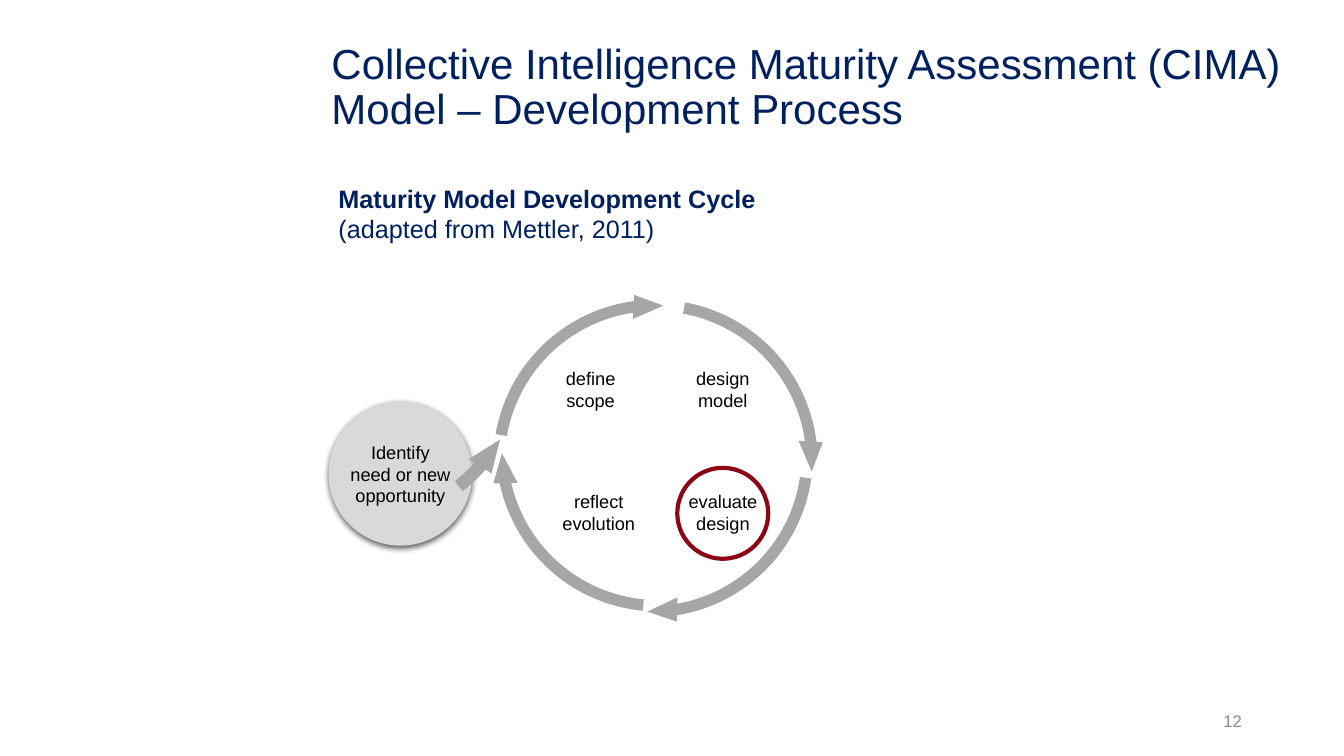
import pptx
import pptx.util
import pptx.oxml
import pptx.oxml.ns
import pptx.dml.color
import pptx.enum.shapes
import pptx.enum.text
from dataclasses import dataclass

Cm = pptx.util.Cm
Pt = pptx.util.Pt
Kind = pptx.enum.shapes.MSO_SHAPE
Align = pptx.enum.text.PP_ALIGN
Anchor = pptx.enum.text.MSO_ANCHOR


@dataclass(frozen=True)
class Theme:
    font: str = "Arial"
    navy: str = "002060"
    black: str = "000000"
    disc: str = "D9D9D9"
    arrow: str = "A6A6A6"
    red: str = "8C0615"
    page: str = "8C8C8C"
    title: int = 30
    head: int = 18
    label: int = 13
    small: int = 12


class Deck:
    def __init__(self, theme):
        self.theme = theme
        self.prs = pptx.Presentation()
        self.prs.slide_width, self.prs.slide_height = Cm(33.87), Cm(19.05)
        self.slide = self.prs.slides.add_slide(self.prs.slide_layouts[5])

    def color(self, code):
        return pptx.dml.color.RGBColor.from_string(code)

    def letter(self, frame, lines, size, color, align, anchor, bold=()):
        """Fill a frame with one paragraph per line; bold lists line numbers."""
        frame.word_wrap = True
        frame.auto_size = pptx.enum.text.MSO_AUTO_SIZE.NONE
        frame.vertical_anchor = anchor
        for i, line in enumerate(lines):
            para = frame.paragraphs[0] if i == 0 else frame.add_paragraph()
            para.alignment = align
            run = para.add_run()
            run.text = line
            run.font.name = self.theme.font
            run.font.size = Pt(size)
            run.font.bold = i in bold
            run.font.color.rgb = self.color(color)

    def title(self, text, left, top, width, height):
        box = self.slide.shapes.title
        box.left, box.top = Cm(left), Cm(top)
        box.width, box.height = Cm(width), Cm(height)
        self.letter(box.text_frame, [text], self.theme.title, self.theme.navy,
                    Align.LEFT, Anchor.MIDDLE)
        box.text_frame.paragraphs[0].line_spacing = 0.9

    def text(self, lines, left, top, width, height, size, color,
             align=Align.LEFT, anchor=Anchor.TOP, bold=()):
        box = self.slide.shapes.add_textbox(
            Cm(left), Cm(top), Cm(width), Cm(height))
        self.letter(box.text_frame, lines, size, color, align, anchor, bold)

    def shape(self, kind, left, top, size, fill=None, line=None):
        item = self.slide.shapes.add_shape(
            kind, Cm(left), Cm(top), Cm(size), Cm(size))
        item.shadow.inherit = False
        if fill:
            item.fill.solid()
            item.fill.fore_color.rgb = self.color(fill)
        else:
            item.fill.background()
        if line:
            item.line.color.rgb = self.color(line)
            item.line.width = Pt(3)
        else:
            item.line.fill.background()
        return item

    def circle(self, lines, left, top, size, fill=None, line=None):
        item = self.shape(Kind.OVAL, left, top, size, fill, line)
        if lines:
            frame = item.text_frame
            frame.margin_left = frame.margin_right = 0
            frame.margin_top = frame.margin_bottom = 0
            self.letter(frame, lines, self.theme.label, self.theme.black,
                        Align.CENTER, Anchor.MIDDLE)
        return item

    def shade(self, item):
        """Cast a soft shadow straight down."""
        effect = item.element.spPr.find(pptx.oxml.ns.qn("a:effectLst"))
        effect.append(pptx.oxml.parse_xml(
            f'<a:outerShdw {pptx.oxml.ns.nsdecls("a")} blurRad="{Pt(4.5)}" '
            f'dist="{Pt(1.5)}" dir="5400000" rotWithShape="0">'
            f'<a:srgbClr val="{self.theme.black}"><a:alpha val="63000"/>'
            '</a:srgbClr></a:outerShdw>'))

    def arc(self, left, top, size, turn, start, flip=False):
        item = self.shape(Kind.CIRCULAR_ARROW, left, top, size,
                          self.theme.arrow)
        for i, value in enumerate((0.034, 6.618, 42.124, start, 0.036)):
            item.adjustments[i] = value
        item.rotation = turn
        if flip:
            item.element.spPr.xfrm.set("flipH", "1")


def main():
    theme = Theme()
    deck = Deck(theme)

    # Title and heading
    deck.title("Collective Intelligence Maturity Assessment (CIMA) "
               "Model – Development Process", 8.1, 0.38, 25.76, 3.68)
    deck.text(["Maturity Model Development Cycle",
               "(adapted from Mettler, 2011)"],
              8.28, 4.5, 12.83, 1.96, theme.head, theme.navy, bold=(0,))

    # Starting point
    need = deck.circle(["Identify need or new opportunity"],
                       8.28, 10.13, 3.62, theme.disc)
    deck.shade(need)

    # Cycle arrows, then the short arrow leading in
    for left, top, turn in ((12.27, 7.39, 191.8), (12.29, 7.39, 282.4),
                            (12.17, 7.24, 10.2), (12.34, 7.09, 97.4)):
        deck.arc(left, top, 8.48, turn, 214.785)
    deck.arc(4.11, 4.06, 9.47, 292.5, 36.367, flip=True)

    # Phases
    for lines, left, top, size in (
            (["reflect evolution"], 13.74, 11.56, 2.7),
            (["define scope"], 13.74, 8.66, 2.29),
            (["design model"], 17.07, 8.66, 2.29),
            (["evaluate", "design"], 16.97, 11.66, 2.5)):
        deck.circle(lines, left, top, size)

    # Ring around the current phase
    deck.circle([], 17.07, 11.79, 2.29, line=theme.red)

    # Page number
    deck.text(["12"], 28.88, 17.65, 2.67, 1.02, theme.small, theme.page,
              Align.RIGHT, Anchor.MIDDLE)

    deck.prs.save("out.pptx")


if __name__ == "__main__":
    main()
